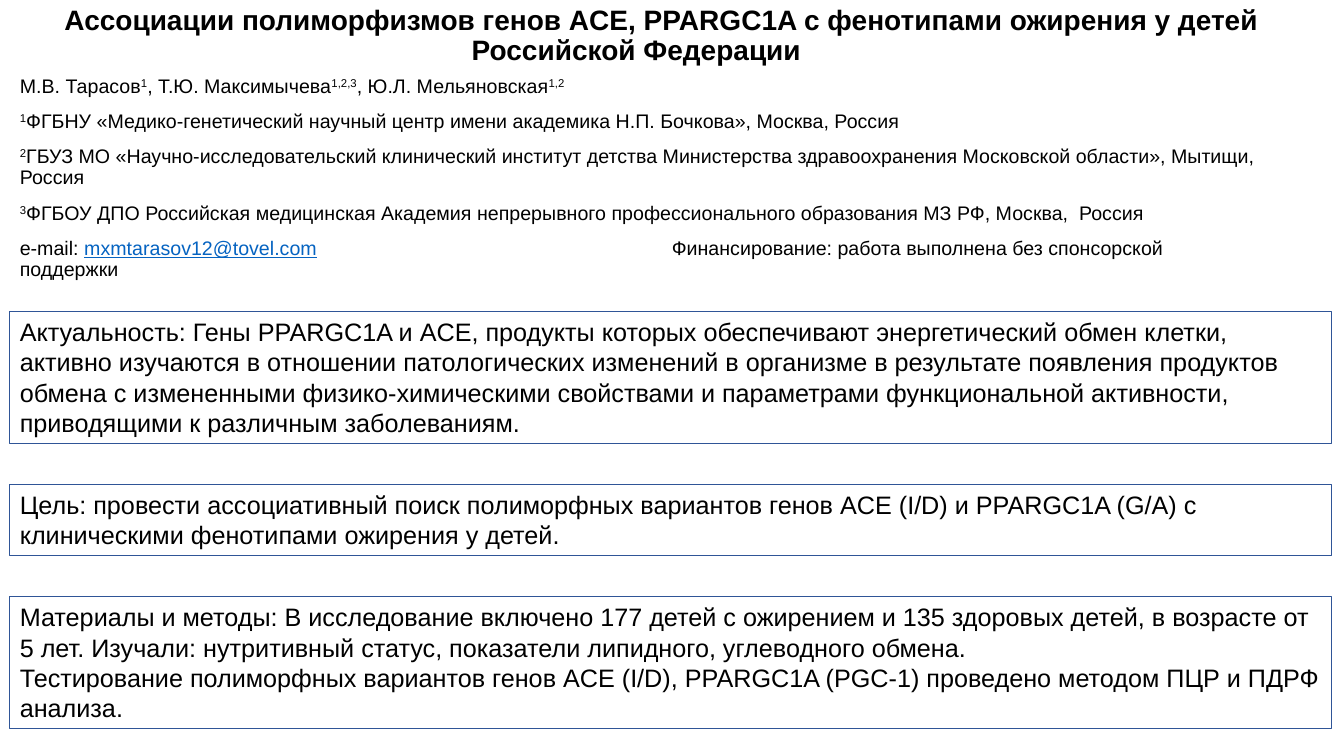
from dataclasses import dataclass
from lxml.etree import SubElement
from pptx import Presentation
from pptx.dml.color import RGBColor
from pptx.enum.shapes import MSO_SHAPE
from pptx.enum.text import MSO_ANCHOR, PP_ALIGN
from pptx.oxml.ns import qn
from pptx.util import Cm, Pt


@dataclass(frozen=True)
class Theme:
    face: str = "Arial"
    ink: RGBColor = RGBColor(0, 0, 0)
    link: RGBColor = RGBColor(0x05, 0x63, 0xC1)
    edge: RGBColor = RGBColor(0x2F, 0x55, 0x97)
    title: int = 20
    small: int = 14
    large: int = 18


TITLE = "\tАссоциации полиморфизмов генов ACЕ, PPARGC1A с фенотипами ожирения у детей Российской Федерации"

CREDITS = [
    [("М.В. Тарасов", ""), ("1", "super"), (", Т.Ю. Максимычева", ""), ("1,2,3", "super"),
     (", Ю.Л. Мельяновская", ""), ("1,2", "super")],
    [("1", "super"), ("ФГБНУ «Медико-генетический научный центр имени академика Н.П. Бочкова», Москва, Россия", "")],
    [("2", "super"), ("ГБУЗ МО «Научно-исследовательский клинический институт детства Министерства "
                      "здравоохранения Московской области», Мытищи, Россия", "")],
    [("3", "super"), ("ФГБОУ ДПО Российская медицинская Академия непрерывного профессионального "
                      "образования МЗ РФ, Москва,  Россия", "")],
    [("e-mail: ", ""), ("mxmtarasov12@tovel.com", "link"),
     ("\tФинансирование: работа выполнена без спонсорской поддержки", "")],
]

PANELS = [
    (3.33, ["Актуальность: Гены PPARGC1A и ACE, продукты которых обеспечивают энергетический обмен клетки, "
            "активно изучаются в отношении патологических изменений в организме в результате появления "
            "продуктов обмена с измененными физико-химическими свойствами и параметрами функциональной "
            "активности, приводящими к различным заболеваниям."]),
    (1.8, ["Цель: провести ассоциативный поиск полиморфных вариантов генов ACЕ (I/D) и PPARGC1A (G/A) "
           "с клиническими фенотипами ожирения у детей."]),
    (3.33, ["Материалы и методы: В исследование включено 177 детей с ожирением и 135 здоровых детей, "
            "в возрасте от 5 лет. Изучали: нутритивный статус, показатели липидного, углеводного обмена.",
            "Тестирование полиморфных вариантов генов ACЕ (I/D), PPARGC1A (PGC-1) проведено методом "
            "ПЦР и ПДРФ анализа."]),
]

LEFT, TOP, WIDTH, GAP = 0.25, 7.85, 33.3, 1.03
FUND_TAB = 16.43
theme = Theme()


def fill_text(frame, paras, size, bold=False, align=PP_ALIGN.LEFT, line=1.0, before=0):
    frame.word_wrap = True
    for index, runs in enumerate(paras):
        para = frame.paragraphs[0] if index == 0 else frame.add_paragraph()
        para.alignment, para.line_spacing, para.space_before = align, line, Pt(before)
        font = para.font
        font.name, font.size, font.bold = theme.face, Pt(size), bold
        font.color.rgb = theme.ink
        for text, style in runs:
            run = para.add_run()
            run.text = text
            if style == "super":
                run.font._element.set("baseline", "30000")
            elif style == "link":
                run.font.color.rgb = theme.link
                run.font.underline = True


def set_tab(para, place):
    props = para._p.get_or_add_pPr()
    tabs = SubElement(props, qn("a:tabLst"))
    SubElement(tabs, qn("a:tab"), pos=str(Cm(place)), algn="l")
    props.insert(props.index(props.find(qn("a:defRPr"))), tabs)


def add_panel(slide, top, height, paras):
    panel = slide.shapes.add_shape(MSO_SHAPE.RECTANGLE, Cm(LEFT), Cm(top), Cm(WIDTH), Cm(height))
    panel.shadow.inherit = False
    panel.fill.background()
    panel.line.color.rgb = theme.edge
    panel.line.width = Pt(0.75)
    panel.text_frame.vertical_anchor = MSO_ANCHOR.TOP
    fill_text(panel.text_frame, [[(text, "")] for text in paras], theme.large)


def main():
    deck = Presentation()
    deck.slide_width, deck.slide_height = Cm(33.87), Cm(19.05)
    slide = deck.slides.add_slide(deck.slide_layouts[6])

    title = slide.shapes.add_textbox(Cm(-0.9), Cm(0), Cm(33.87), Cm(1.8)).text_frame
    title.vertical_anchor = MSO_ANCHOR.BOTTOM
    fill_text(title, [[(TITLE, "")]], theme.title, bold=True, align=PP_ALIGN.CENTER, line=0.9)

    credits = slide.shapes.add_textbox(Cm(LEFT), Cm(1.8), Cm(31.75), Cm(4.6)).text_frame
    fill_text(credits, CREDITS, theme.small, line=0.9, before=10)
    set_tab(credits.paragraphs[-1], FUND_TAB)

    top = TOP
    for height, paras in PANELS:
        add_panel(slide, top, height, paras)
        top += height + GAP

    deck.save("out.pptx")


if __name__ == "__main__":
    main()
